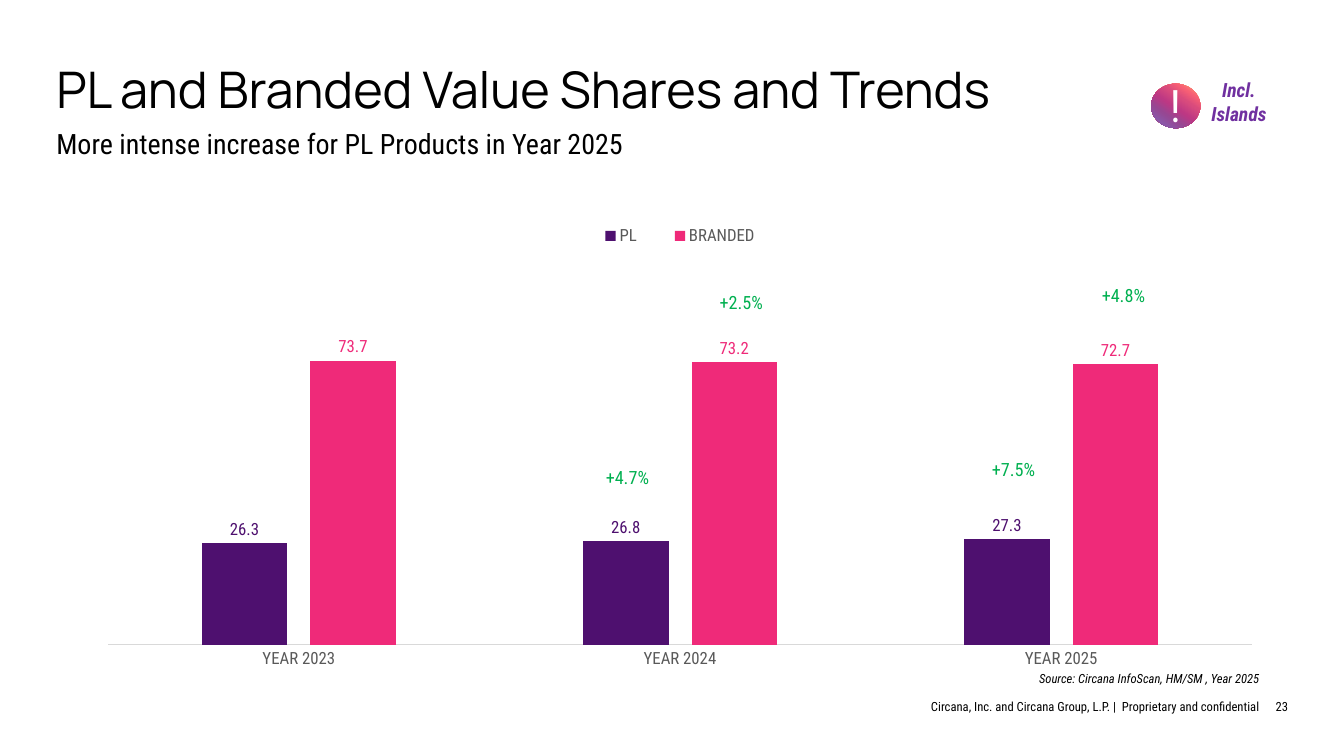
from dataclasses import dataclass

from lxml.etree import SubElement
from pptx import Presentation
from pptx.chart.data import CategoryChartData
from pptx.dml.color import RGBColor
from pptx.enum.chart import XL_CHART_TYPE, XL_LABEL_POSITION, XL_LEGEND_POSITION, XL_TICK_MARK
from pptx.enum.shapes import MSO_SHAPE
from pptx.enum.text import MSO_ANCHOR, PP_ALIGN
from pptx.oxml import parse_xml
from pptx.oxml.ns import nsdecls, qn
from pptx.util import Cm, Pt


@dataclass(frozen=True)
class Theme:
    heading: str = "Manrope"
    body: str = "Roboto Condensed"
    black: str = "000000"
    white: str = "FFFFFF"
    grey: str = "595959"
    axis: str = "D9D9D9"
    growth: str = "00B050"
    badge: str = "7030A0"
    pl: str = "4E106F"
    branded: str = "EF2A79"
    title_size: int = 36
    mark_size: int = 32
    subtitle_size: int = 20
    badge_size: int = 14
    growth_size: int = 13
    chart_size: int = 12
    small_size: int = 9


theme = Theme()

TITLE = "PL and Branded Value Shares and Trends"
SUBTITLE = "More intense increase for PL Products in Year 2025"
SOURCE = "Source: Circana InfoScan, HM/SM , Year 2025"
FOOTER = "Circana, Inc. and Circana Group, L.P. |  Proprietary and confidential"
PAGE_NUMBER = "23"
BADGE = "Incl. Islands"
YEARS = ["YEAR 2023", "YEAR 2024", "YEAR 2025"]
SERIES = [
    ("PL", (26.3, 26.8, 27.3), theme.pl),
    ("BRANDED", (73.7, 73.2, 72.7), theme.branded),
]
GROWTH = [
    ("+7.5%", 24.74, 11.28),
    ("+4.8%", 27.51, 6.88),
    ("+4.7%", 15.01, 11.48),
    ("+2.5%", 17.88, 7.06),
]
BADGE_STOPS = [
    (5, "FF9971"), (21, "F75F75"), (35, "D94B7D"), (53, "BD3884"),
    (70, "964894"), (84, "8B57A8"), (95, "7A4C93"),
]
BADGE_ANGLE = 124
PLOT_LAYOUT = {"x": 0.02, "y": 0.1, "w": 0.96, "h": 0.83}
LEGEND_LAYOUT = {"x": 0.41, "y": 0.01, "w": 0.18, "h": 0.08}


def rgb(value):
    return RGBColor.from_string(value)


def style_font(font, size, color, name=theme.body, bold=False, italic=False):
    font.name = name
    font.size = Pt(size)
    font.bold = bold
    font.italic = italic
    font.color.rgb = rgb(color)


def write_text(frame, text, align=PP_ALIGN.LEFT, spacing=None, **font):
    paragraph = frame.paragraphs[0]
    paragraph.alignment = align
    paragraph.line_spacing = spacing
    run = paragraph.add_run()
    run.text = text
    style_font(run.font, **font)


def add_text(slide, text, box, anchor=MSO_ANCHOR.TOP, padded=False, **style):
    frame = slide.shapes.add_textbox(*map(Cm, box)).text_frame
    frame.word_wrap = True
    frame.vertical_anchor = anchor
    if not padded:
        frame.margin_left = frame.margin_right = 0
        frame.margin_top = frame.margin_bottom = 0
    write_text(frame, text, **style)


def make_layout(positions, inner=False):
    target = '<c:layoutTarget val="inner"/>' if inner else ""
    modes = "".join(f'<c:{key}Mode val="edge"/>' for key in "xy")
    values = "".join(f'<c:{key} val="{value}"/>' for key, value in positions.items())
    return parse_xml(
        f"<c:layout {nsdecls('c')}><c:manualLayout>{target}{modes}{values}"
        "</c:manualLayout></c:layout>"
    )


def replace_layout(parent, layout, index):
    for old in parent.findall(qn("c:layout")):
        parent.remove(old)
    parent.insert(index, layout)


def add_share_chart(slide):
    data = CategoryChartData(number_format="0.0")
    data.categories = YEARS
    for name, values, _ in SERIES:
        data.add_series(name, values)
    box = map(Cm, (2.13, 5.36, 30.02, 11.71))
    chart = slide.shapes.add_chart(XL_CHART_TYPE.COLUMN_CLUSTERED, *box, data).chart
    chart.has_title = False
    style_font(chart.font, theme.chart_size, theme.black)

    chart.has_legend = True
    legend = chart.legend
    legend.position = XL_LEGEND_POSITION.TOP
    legend.include_in_layout = False
    style_font(legend.font, theme.chart_size, theme.grey)
    replace_layout(legend._element, make_layout(LEGEND_LAYOUT), 1)
    plot_area = chart._chartSpace.chart.plotArea
    replace_layout(plot_area, make_layout(PLOT_LAYOUT, inner=True), 0)

    value_axis = chart.value_axis
    value_axis.minimum_scale = 0
    value_axis.maximum_scale = 100
    value_axis.has_major_gridlines = False
    value_axis.visible = False
    category_axis = chart.category_axis
    category_axis.major_tick_mark = XL_TICK_MARK.NONE
    category_axis.format.line.color.rgb = rgb(theme.axis)
    category_axis.format.line.width = Pt(0.75)
    style_font(category_axis.tick_labels.font, theme.chart_size, theme.grey)

    plot = chart.plots[0]
    plot.vary_by_categories = False
    plot.gap_width = 219
    plot.overlap = -27
    for series, (_, _, color) in zip(plot.series, SERIES):
        series.format.fill.solid()
        series.format.fill.fore_color.rgb = rgb(color)
        labels = series.data_labels
        labels.show_value = True
        labels.number_format = "0.0"
        labels.number_format_is_linked = False
        labels.position = XL_LABEL_POSITION.OUTSIDE_END
        style_font(labels.font, theme.chart_size, color)


def add_growth(slide, text, left, top):
    frame = slide.shapes.add_table(1, 1, Cm(left), Cm(top), Cm(1.6), Cm(0.84))
    table = frame.table
    table.first_row = table.horz_banding = False
    cell = table.cell(0, 0)
    cell.margin_left = cell.margin_right = Cm(0.03)
    cell.margin_top, cell.margin_bottom = Cm(0.05), 0
    cell.vertical_anchor = MSO_ANCHOR.BOTTOM
    write_text(cell.text_frame, text, align=PP_ALIGN.CENTER,
               size=theme.growth_size, color=theme.growth)
    properties = cell._tc.get_or_add_tcPr()
    for side in ("lnL", "lnR", "lnT", "lnB"):
        border = SubElement(properties, qn(f"a:{side}"), w=str(Pt(1)))
        fill = SubElement(border, qn("a:solidFill"))
        SubElement(fill, qn("a:srgbClr"), val=theme.white)
    cell.fill.background()


def add_badge(slide):
    box = map(Cm, (29.01, 2.11, 1.24, 1.12))
    circle = slide.shapes.add_shape(MSO_SHAPE.OVAL, *box)
    circle.shadow.inherit = False
    circle.line.fill.background()
    stops = "".join(
        f'<a:gs pos="{position * 1000}"><a:srgbClr val="{color}"/></a:gs>'
        for position, color in BADGE_STOPS
    )
    gradient = parse_xml(
        f"<a:gradFill {nsdecls('a')}><a:gsLst>{stops}</a:gsLst>"
        f'<a:lin ang="{BADGE_ANGLE * 60000}" scaled="0"/></a:gradFill>'
    )
    circle._element.spPr.find(qn("a:prstGeom")).addnext(gradient)
    add_text(slide, "!", (29.13, 1.83, 0.99, 1.17), padded=True,
             align=PP_ALIGN.CENTER, size=theme.mark_size, color=theme.white)
    add_text(slide, BADGE, (30.12, 1.85, 2.21, 1.45), padded=True, align=PP_ALIGN.CENTER,
             size=theme.badge_size, color=theme.badge, bold=True, italic=True)


def main():
    presentation = Presentation()
    presentation.slide_width, presentation.slide_height = Cm(33.87), Cm(19.05)
    slide = presentation.slides.add_slide(presentation.slide_layouts[6])
    small = dict(anchor=MSO_ANCHOR.BOTTOM, align=PP_ALIGN.RIGHT,
                 size=theme.small_size, color=theme.black)
    add_text(slide, FOOTER, (21.06, 17.5, 10.67, 0.51), spacing=0.9, **small)
    add_text(slide, PAGE_NUMBER, (32.05, 17.53, 0.41, 0.46), **small)
    add_text(slide, TITLE, (1.42, 1.63, 31.06, 1.52), spacing=0.9,
             size=theme.title_size, color=theme.black, name=theme.heading)
    add_text(slide, SUBTITLE, (1.42, 3.28, 31.06, 1.27), spacing=0.9,
             size=theme.subtitle_size, color=theme.black)
    add_share_chart(slide)
    add_text(slide, SOURCE, (18.14, 16.84, 13.59, 0.46), spacing=0.9, italic=True, **small)
    for growth in GROWTH:
        add_growth(slide, *growth)
    add_badge(slide)
    presentation.save("out.pptx")


if __name__ == "__main__":
    main()
